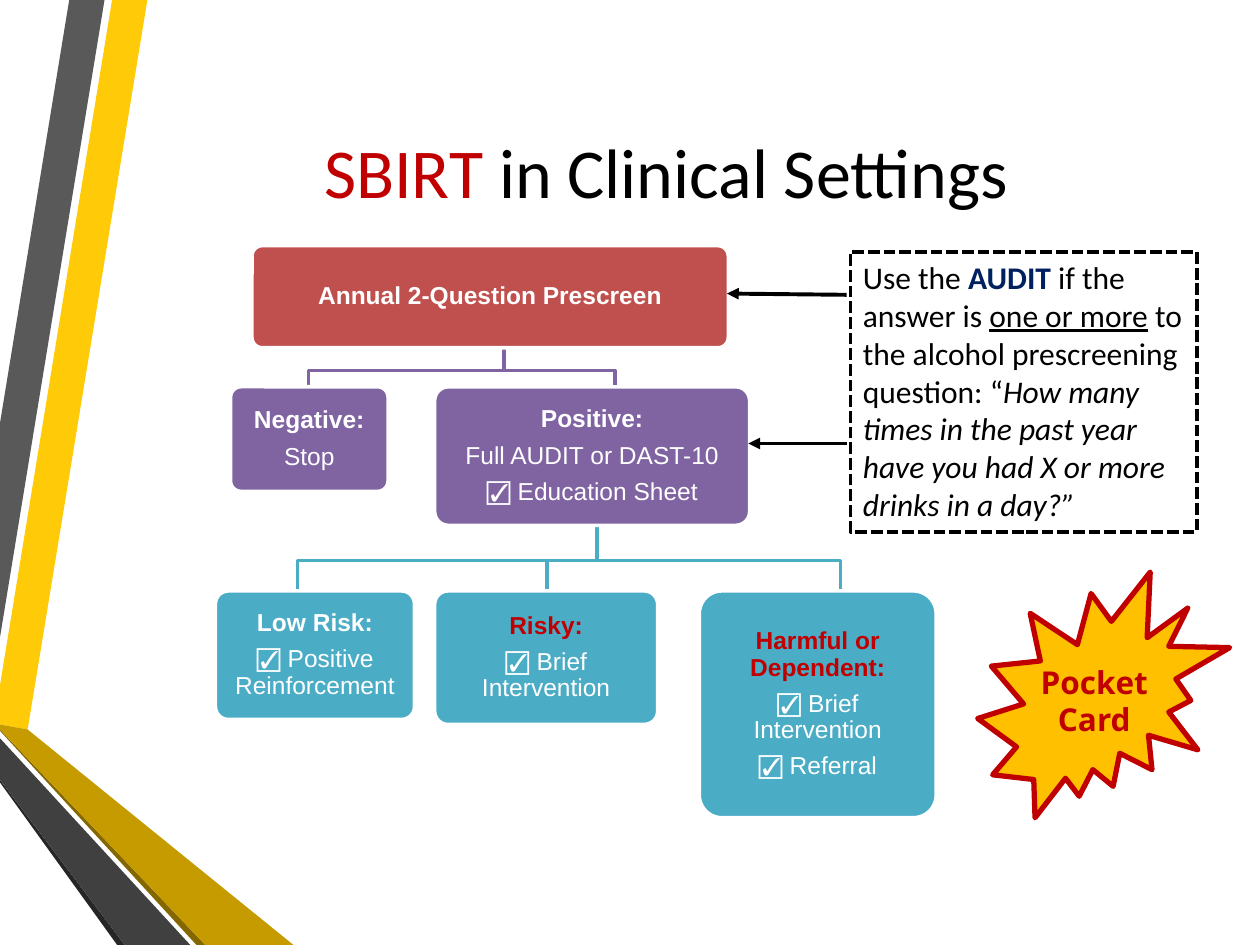
from lxml import etree
from pptx import Presentation, util as u
from pptx.dml.color import RGBColor
from pptx.enum import dml, shapes as kinds, text
from pptx.oxml.ns import qn

# All places are columns and rows of a grid of 1000 by 750 cells.
CELL = 9144
COLUMNS, ROWS = 1000, 750

COLORS = {
    "yellow": "FFCA08", "gray": "595959", "black": "000000", "white": "FFFFFF",
    "shade": "262626", "olive": "846700", "gold": "C59B00", "charcoal": "404040",
    "red": "C00000", "navy": "002060", "brick": "C0504D", "purple": "8064A2",
    "teal": "4BACC6", "amber": "FFC000",
}

RIBBONS = [
    ("yellow", [(0, 544), (0, 575), (22, 579), (117, 0), (89, 0)]),
    ("gray", [(83, 0), (55, 0), (0, 336), (0, 506)]),
    ("shade", [(0, 619), (0, 621), (93, 750), (99, 750)]),
    ("olive", [(0, 579), (0, 580), (156, 750), (163, 750)]),
    ("gold", [(0, 579), (163, 750), (233, 750), (22, 579), (0, 575)]),
    ("charcoal", [(0, 619), (99, 750), (151, 750), (0, 586)]),
]

TITLE = [("SBIRT", {"color": "red"}), (" in Clinical Settings", {})]

# Rows of the tree: color, top
LEVELS = [("brick", 195), ("purple", 307), ("teal", 469)]
# Level, left, width, height, heading color, heading, further lines
BOXES = [
    (0, 200, 378, 81, "white", "Annual 2-Question Prescreen", []),
    (1, 183, 125, 83, "white", "Negative:", ["Stop"]),
    (1, 345, 250, 110, "white", "Positive:",
     ["Full AUDIT or DAST-10", "☑ Education Sheet"]),
    (2, 171, 158, 102, "white", "Low Risk:", ["☑ Positive Reinforcement"]),
    (2, 345, 177, 106, "red", "Risky:", ["☑ Brief Intervention"]),
    (2, 555, 188, 180, "red", "Harmful or Dependent:",
     ["☑ Brief Intervention", "☑ Referral"]),
]
# Level reached, start column, start row, bend row, end columns
BRANCHES = [
    (1, 400, 276, 294, [245, 488]),
    (2, 474, 417, 445, [236, 434, 667]),
]

AUDIT_NOTE = [
    ("Use the ", {}),
    ("AUDIT ", {"color": "navy", "bold": True}),
    ("if the answer is ", {}),
    ("one or more", {"underline": True}),
    (" to the alcohol prescreening question: “", {}),
    ("How many times in the past year have you had X or more drinks in a day?”",
     {"italic": True}),
]
ARROWS = [((672, 234), (577, 233)), ((672, 352), (594, 352))]
POCKET_CARD = [("Pocket Card", {"color": "red", "bold": True})]


def rgb(name):
    return RGBColor.from_string(COLORS[name])


def cells(*values):
    return [u.Emu(value * CELL) for value in values]


def paint(shape, fill=None, line=None, width=2):
    shape.shadow.inherit = False
    if fill:
        shape.fill.solid()
        shape.fill.fore_color.rgb = rgb(fill)
    else:
        shape.fill.background()
    if line:
        shape.line.color.rgb = rgb(line)
        shape.line.width = u.Pt(width)
    else:
        shape.line.fill.background()


def add_outline(slide, points, close):
    builder = slide.shapes.build_freeform(*points[0], scale=CELL)
    builder.add_line_segments(points[1:], close=close)
    return builder.convert_to_shape()


def write(shape, paragraphs, font, size, anchor, inset=None, **layout):
    """Fill a shape with paragraphs, each a list of (text, font values)."""
    frame = shape.text_frame
    frame.word_wrap = True
    frame.vertical_anchor = anchor
    if inset is not None:
        for side in ("left", "right", "top", "bottom"):
            setattr(frame, f"margin_{side}", u.Emu(inset * CELL))
    for index, runs in enumerate(paragraphs):
        paragraph = frame.add_paragraph() if index else frame.paragraphs[0]
        for name, value in layout.items():
            setattr(paragraph, name, value)
        for words, values in runs:
            run = paragraph.add_run()
            run.text = words
            formats = {"name": font, "size": u.Pt(size), "color": "black", **values}
            run.font.color.rgb = rgb(formats.pop("color"))
            for name, value in formats.items():
                setattr(run.font, name, value)


def add_tree(slide):
    for level, column, start, bend, ends in BRANCHES:
        color, top = LEVELS[level]
        for end in ends:
            points = [(column, start), (column, bend), (end, bend), (end, top + 4)]
            paint(add_outline(slide, points, False), line=color)
    for level, left, width, height, heading_color, heading, lines in BOXES:
        color, top = LEVELS[level]
        box = slide.shapes.add_shape(
            kinds.MSO_SHAPE.ROUNDED_RECTANGLE, *cells(left, top, width, height))
        box.adjustments[0] = 0.1
        paint(box, color, "white")
        paragraphs = [[(heading, {"color": heading_color, "bold": True})]]
        paragraphs += [[(line, {"color": "white"})] for line in lines]
        write(box, paragraphs, "Arial", 14, text.MSO_ANCHOR.MIDDLE, inset=6,
              alignment=text.PP_ALIGN.CENTER, line_spacing=0.9,
              space_after=u.Pt(5.5))


def add_arrow(slide, start, end):
    arrow = slide.shapes.add_connector(
        kinds.MSO_CONNECTOR.STRAIGHT, *cells(*start, *end))
    arrow.line.color.rgb = rgb("black")
    arrow.line.width = u.Pt(2.25)
    etree.SubElement(arrow.line._get_or_add_ln(), qn("a:tailEnd"), type="triangle")
    etree.SubElement(arrow._element.spPr, qn("a:effectLst"))


def main():
    presentation = Presentation()
    presentation.slide_width, presentation.slide_height = cells(COLUMNS, ROWS)
    slide = presentation.slides.add_slide(presentation.slide_layouts[6])

    for color, points in RIBBONS:
        paint(add_outline(slide, points, True), color)

    title = slide.shapes.add_textbox(*cells(107, 50, 843, 170))
    write(title, [TITLE], "Calibri", 40, text.MSO_ANCHOR.MIDDLE,
          alignment=text.PP_ALIGN.CENTER)

    add_tree(slide)

    note = slide.shapes.add_shape(
        kinds.MSO_SHAPE.RECTANGLE, *cells(675, 200, 275, 222))
    paint(note, line="black", width=2.25)
    note.line.dash_style = dml.MSO_LINE.SQUARE_DOT
    write(note, [AUDIT_NOTE], "Calibri", 18, text.MSO_ANCHOR.TOP,
          alignment=text.PP_ALIGN.LEFT)
    for start, end in ARROWS:
        add_arrow(slide, start, end)

    burst = slide.shapes.add_shape(
        kinds.MSO_SHAPE.EXPLOSION2, *cells(776, 454, 200, 195))
    paint(burst, "amber", "red", 3)
    card = slide.shapes.add_textbox(*cells(803, 521, 131, 71))
    write(card, [POCKET_CARD], "Noto Sans", 18, text.MSO_ANCHOR.TOP,
          alignment=text.PP_ALIGN.CENTER)

    presentation.save("out.pptx")


if __name__ == "__main__":
    main()
